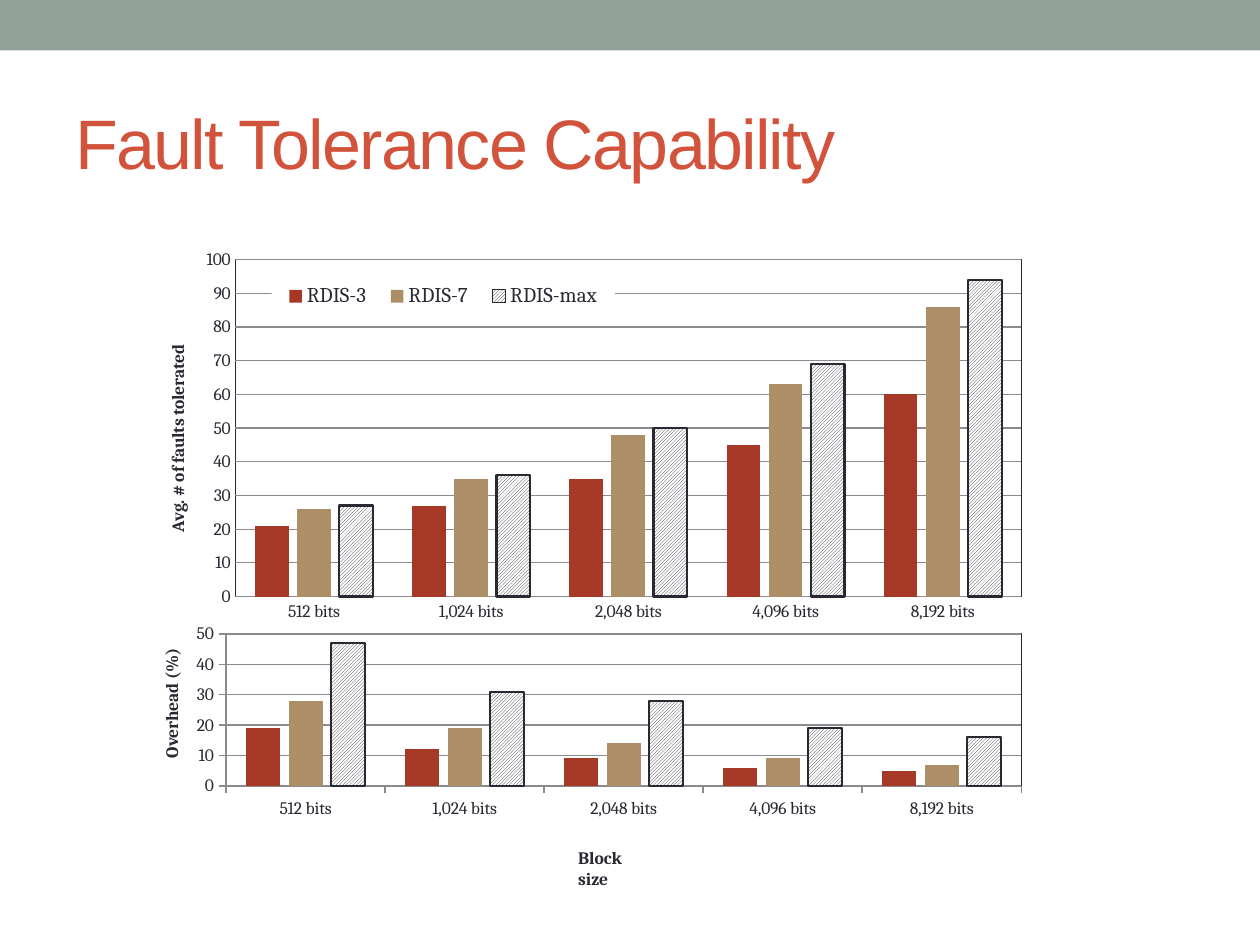
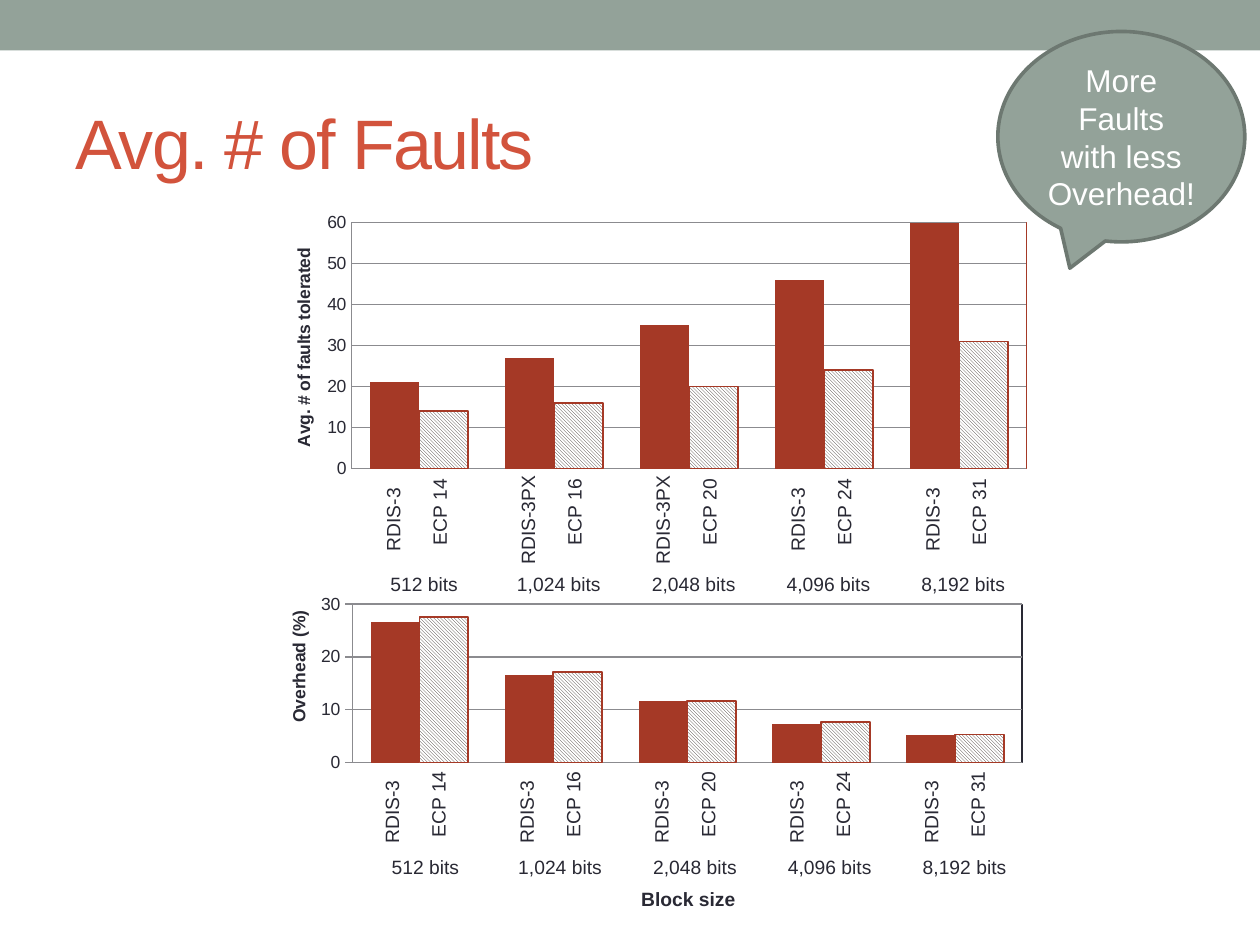
from dataclasses import dataclass

from lxml import etree
from pptx import Presentation
from pptx import util as u
from pptx.chart import data as chart_data
from pptx.dml import color
from pptx.enum import chart as ce
from pptx.enum import dml, shapes, text
from pptx.oxml import ns


@dataclass(frozen=True)
class Theme:
    sage: str = "93A299"
    sage_edge: str = "6D7871"
    coral: str = "D2533C"
    brick: str = "A53926"
    tan: str = "AD8F67"
    ink: str = "292934"
    hatch: str = "39302B"
    grid: str = "8B8B8F"
    white: str = "FFFFFF"
    sans: str = "Arial"
    serif: str = "Cambria"
    title_size: float = 40
    callout_size: float = 18
    legend_size: float = 12
    label_size: float = 11
    chart_size: float = 10


T = Theme()
BLOCK_SIZES = ["512 bits", "1,024 bits", "2,048 bits", "4,096 bits", "8,192 bits"]
FAULTS_TITLE = "Avg. # of faults tolerated"
OVERHEAD_TITLE = "Overhead (%)"
SIZE_TITLE = "Block size"
UP = dml.MSO_PATTERN.LIGHT_UPWARD_DIAGONAL
DOWN = dml.MSO_PATTERN.LIGHT_DOWNWARD_DIAGONAL
NO_TICK, TICK = ce.XL_TICK_MARK.NONE, ce.XL_TICK_MARK.OUTSIDE

# A series look is (solid colour,) or (pattern, pattern colour, edge colour, edge width).
RDIS_LOOK = {"RDIS-3": (T.brick,), "RDIS-7": (T.tan,),
             "RDIS-max": (UP, T.ink, T.ink, 1.25)}
ECP_LOOK = {"RDIS-3": (T.brick,), "ECP": (DOWN, T.hatch, T.brick, 1)}
RDIS_FORMAT = dict(look=RDIS_LOOK, font=T.serif, gap=117, overlap=-25, edge=T.ink)
ECP_FORMAT = dict(look=ECP_LOOK, font=T.sans, gap=75, overlap=0, categories=False)

RDIS_CHARTS = [
    dict(RDIS_FORMAT, at=(1.08, 1.58, 7.17, 3.43), plot=(0.11, 0.14, 0.87, 0.78),
         top=100, step=10, ticks=NO_TICK, value_line=False,
         title_at=(0.03, 0.33), legend_at=(0.15, 0.19, 0.38, 0.07),
         values=[(21, 27, 35, 45, 60), (26, 35, 48, 63, 86), (27, 36, 50, 69, 94)]),
    dict(RDIS_FORMAT, at=(1.17, 4.87, 6.94, 1.8), plot=(0.09, 0.09, 0.91, 0.67),
         top=50, step=10, ticks=TICK,
         values=[(19, 12, 9, 6, 5), (28, 19, 14, 9, 7), (47, 31, 28, 19, 16)]),
]
ECP_CHARTS = [
    dict(ECP_FORMAT, at=(2.11, 1.5, 6.16, 2.96), plot=(0.11, 0.09, 0.87, 0.66),
         top=60, step=10, ticks=NO_TICK, edge=T.brick, title_at=(0.03, 0.15),
         values=[(21, 27, 35, 46, 60), (14, 16, 20, 24, 31)]),
    dict(ECP_FORMAT, at=(2.33, 4.71, 5.84, 1.7), plot=(0.08, 0.05, 0.91, 0.74),
         top=30, step=10, ticks=TICK, edge=T.ink,
         values=[(26.7, 16.5, 11.6, 7.3, 5.3), (27.5, 17.2, 11.7, 7.6, 5.3)]),
]

ECP_NAMES = ["ECP 14", "ECP 16", "ECP 20", "ECP 24", "ECP 31"]
FAULTS_RDIS_NAMES = ["RDIS-3", "RDIS-3PX", "RDIS-3PX", "RDIS-3", "RDIS-3"]
OVERHEAD_RDIS_NAMES = ["RDIS-3"] * 5
LABEL_WIDTHS = {"RDIS-3": 0.71, "RDIS-3PX": 0.92, "512 bits": 0.74}
LABEL_WIDTHS |= dict.fromkeys(ECP_NAMES, 0.73) | dict.fromkeys(BLOCK_SIZES[1:], 0.87)
LABEL_HEIGHT, LABEL_STEP = 0.29, 1.07
# Each group lists rows of (labels, first centre x, centre y, rotation).
LABEL_GROUPS = [
    [(FAULTS_RDIS_NAMES, 3.12, 4.12, 270), (ECP_NAMES, 3.49, 4.06, 270)],
    [(OVERHEAD_RDIS_NAMES, 3.11, 6.44, 270), (ECP_NAMES, 3.48, 6.38, 270)],
    [(BLOCK_SIZES, 3.37, 4.64, 0)],
    [(BLOCK_SIZES, 3.38, 6.88, 0)],
]


def rgb(value):
    return color.RGBColor.from_string(value)


def inches(values):
    return [u.Inches(value) for value in values]


def apply(target, **values):
    for name, value in values.items():
        setattr(target, name, value)


def set_font(font, name, size, ink, bold=False):
    apply(font, name=name, size=u.Pt(size), bold=bold)
    font.color.rgb = rgb(ink)


def paint(fill, ink):
    fill.solid()
    fill.fore_color.rgb = rgb(ink)


def outline(line, ink, width):
    paint(line.fill, ink)
    line.width = u.Pt(width)


def add_label(parent, words, at, font, size, ink=T.ink, bold=False, rotation=0,
              wrap=False):
    box = parent.add_textbox(*inches(at))
    box.rotation = rotation
    fit = text.MSO_AUTO_SIZE.NONE if wrap else text.MSO_AUTO_SIZE.SHAPE_TO_FIT_TEXT
    apply(box.text_frame, word_wrap=wrap, auto_size=fit)
    run = box.text_frame.paragraphs[0].add_run()
    run.text = words
    set_font(run.font, font, size, ink, bold)
    return box, run


def add_frame(deck, title):
    """Start a slide with the shared band and title."""
    slide = deck.slides.add_slide(deck.slide_layouts[6])
    band = slide.shapes.add_shape(shapes.MSO_SHAPE.RECTANGLE, *inches((0, 0, 10, 0.4)))
    band.shadow.inherit = False
    paint(band.fill, T.sage)
    band.line.fill.background()
    box, run = add_label(slide.shapes, title, (0.5, 0.58, 9, 1.08), T.sans,
                         T.title_size, T.coral, wrap=True)
    box.text_frame.vertical_anchor = text.MSO_ANCHOR.MIDDLE
    run.font._element.set("spc", "-100")
    return slide


def place(part, box, inner=False):
    """Give a chart part a manual layout in fractions of the chart."""
    layout = part.find(ns.qn("c:layout"))
    if layout is None:
        layout = etree.Element(ns.qn("c:layout"))
        leading = [ns.qn("c:tx"), ns.qn("c:legendPos")]
        part.insert(sum(child.tag in leading for child in part), layout)
    for child in list(layout):
        layout.remove(child)
    manual = etree.SubElement(layout, ns.qn("c:manualLayout"))
    settings = [("layoutTarget", "inner")] if inner else []
    settings += [("xMode", "edge"), ("yMode", "edge"), *zip("xywh", box)]
    for tag, value in settings:
        etree.SubElement(manual, ns.qn(f"c:{tag}")).set("val", str(value))


def area_format(fill="", edge=""):
    solid = '<a:solidFill><a:srgbClr val="{}"/></a:solidFill>'
    inside = solid.format(fill) if fill else "<a:noFill/>"
    border = solid.format(edge) if edge else "<a:noFill/>"
    return etree.fromstring(f'<c:spPr {ns.nsdecls("c", "a")}>{inside}'
                            f'<a:ln w="9525">{border}</a:ln></c:spPr>')


def paint_series(series, solid_or_pattern, ink=None, edge=None, width=None):
    series.invert_if_negative = False
    fill = series.format.fill
    if ink is None:
        paint(fill, solid_or_pattern)
        return
    fill.patterned()
    fill.pattern = solid_or_pattern
    fill.fore_color.rgb = rgb(ink)
    fill.back_color.rgb = rgb(T.white)
    outline(series.format.line, edge, width)


def add_axis_title(axis, words, font, at):
    title = axis.axis_title
    title.text_frame.text = words
    set_font(title.text_frame.paragraphs[0].runs[0].font, font, T.chart_size, T.ink, True)
    body = title.element.find(".//" + ns.qn("a:bodyPr"))
    body.set("rot", "-5400000")
    body.set("vert", "horz")
    place(title.element, at)


def add_legend(chart, font, at):
    chart.has_legend = True
    apply(chart.legend, position=ce.XL_LEGEND_POSITION.TOP, include_in_layout=False)
    set_font(chart.legend.font, font, T.legend_size, T.ink)
    legend = chart.element.find(".//" + ns.qn("c:legend"))
    place(legend, at)
    legend.find(ns.qn("c:overlay")).addnext(area_format(fill=T.white))


def add_bars(slide, at, plot, look, values, font, gap, overlap, edge, top, step, ticks,
             categories=True, value_line=True, title_at=None, legend_at=None):
    table = chart_data.CategoryChartData()
    table.categories = BLOCK_SIZES
    for name, row in zip(look, values):
        table.add_series(name, row)
    chart = slide.shapes.add_chart(ce.XL_CHART_TYPE.COLUMN_CLUSTERED, *inches(at),
                                   table).chart
    apply(chart, has_title=False, has_legend=False)
    set_font(chart.font, font, T.chart_size, T.ink)
    bars = chart.plots[0]
    apply(bars, gap_width=gap, overlap=overlap, vary_by_categories=False)
    for series in bars.series:
        paint_series(series, *look[series.name])

    sizes, amounts = chart.category_axis, chart.value_axis
    for axis in (sizes, amounts):
        apply(axis, major_tick_mark=ticks, minor_tick_mark=NO_TICK)
        outline(axis.format.line, T.grid, 0.75)
    apply(sizes, visible=categories, has_major_gridlines=False)
    apply(amounts, minimum_scale=0, maximum_scale=top, major_unit=step,
          has_major_gridlines=True)
    apply(amounts.tick_labels, number_format="0", number_format_is_linked=False)
    outline(amounts.major_gridlines.format.line, T.grid, 0.75)
    if not value_line:
        amounts.format.line.fill.background()
    if title_at:
        add_axis_title(amounts, FAULTS_TITLE, font, title_at)
    if legend_at:
        add_legend(chart, font, legend_at)
    plot_area = chart.element.find(".//" + ns.qn("c:plotArea"))
    place(plot_area, plot, inner=True)
    plot_area.append(area_format(edge=edge))


def add_bar_labels(slide, rows):
    group = slide.shapes.add_group_shape()
    for names, first_x, center_y, rotation in rows:
        for index, name in enumerate(names):
            width = LABEL_WIDTHS[name]
            left = first_x + index * LABEL_STEP - width / 2
            add_label(group.shapes, name,
                      (left, center_y - LABEL_HEIGHT / 2, width, LABEL_HEIGHT),
                      T.sans, T.label_size, rotation=rotation)


def add_callout(slide, words):
    bubble = slide.shapes.add_shape(shapes.MSO_SHAPE.OVAL_CALLOUT,
                                    *inches((7.92, 0.25, 1.96, 1.67)))
    bubble.shadow.inherit = False
    paint(bubble.fill, T.sage)
    outline(bubble.line, T.sage_edge, 2.08)
    apply(bubble.text_frame, word_wrap=True, vertical_anchor=text.MSO_ANCHOR.MIDDLE)
    line = bubble.text_frame.paragraphs[0]
    line.alignment = text.PP_ALIGN.CENTER
    run = line.add_run()
    run.text = words
    set_font(run.font, T.sans, T.callout_size, T.white)


def main():
    deck = Presentation()
    apply(deck, slide_width=u.Inches(10), slide_height=u.Inches(7.5))

    capability = add_frame(deck, "Fault Tolerance Capability")
    for bars in RDIS_CHARTS:
        add_bars(capability, **bars)
    add_label(capability.shapes, OVERHEAD_TITLE, (0.81, 5.43, 1.1, 0.27), T.serif,
              T.chart_size, bold=True, rotation=270)
    add_label(capability.shapes, SIZE_TITLE, (4.49, 6.67, 0.81, 0.27), T.serif,
              T.chart_size, bold=True)

    faults = add_frame(deck, "Avg. # of Faults")
    for bars in ECP_CHARTS:
        add_bars(faults, **bars)
    add_label(faults.shapes, OVERHEAD_TITLE, (1.82, 5.15, 1.1, 0.27), T.sans,
              T.chart_size, bold=True, rotation=270)
    add_label(faults.shapes, SIZE_TITLE, (4.99, 6.99, 0.96, 0.29), T.sans,
              T.label_size, bold=True)
    for rows in LABEL_GROUPS:
        add_bar_labels(faults, rows)
    add_callout(faults, "More Faults with less Overhead!")

    deck.save("out.pptx")


if __name__ == "__main__":
    main()
